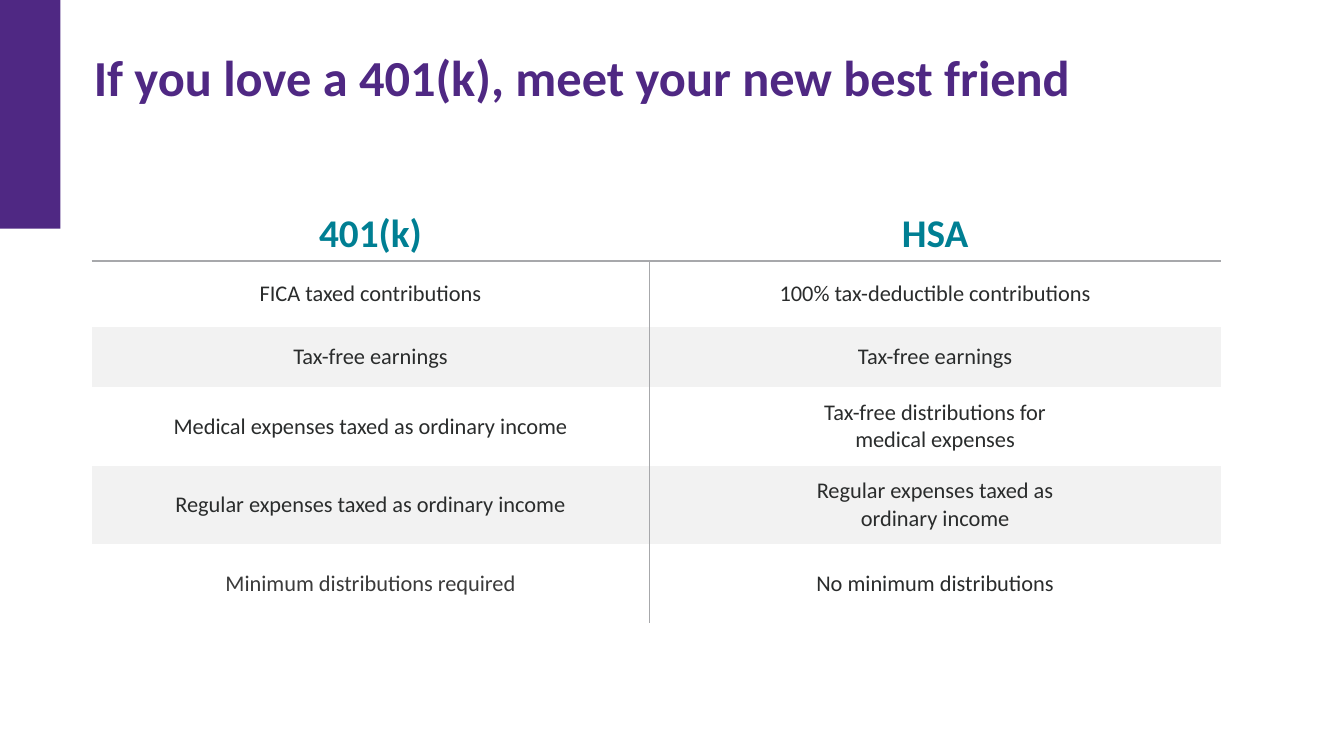
from lxml.etree import SubElement
from pptx import Presentation
from pptx.dml.color import RGBColor
from pptx.enum.shapes import MSO_SHAPE
from pptx.enum.text import MSO_ANCHOR, PP_ALIGN
from pptx.oxml.ns import qn
from pptx.util import Inches, Pt

TITLE = "If you love a 401(k), meet your new best friend"
ACCOUNTS = ("401(k)", "HSA")
COMPARISON = [
    ("FICA taxed contributions", "100% tax-deductible contributions"),
    ("Tax-free earnings", "Tax-free earnings"),
    ("Medical expenses taxed as ordinary income",
     "Tax-free distributions for\vmedical expenses"),
    ("Regular expenses taxed as ordinary income",
     "Regular expenses taxed as\vordinary income"),
    ("Minimum distributions required", "No minimum distributions"),
]
COLORS = {"purple": "4F2883", "teal": "007F93", "body": "2A2C2C",
          "soft": "3B3B3B", "rule": "A7A8AB", "white": "FFFFFF", "band": "F2F2F2"}
FONT = "Calibri"
COLUMN_WIDTHS = (5.53, 5.67)
ROW_HEIGHTS = (0.54, 0.65, 0.6, 0.78, 0.78, 0.78)


def color(name):
    return RGBColor.from_string(COLORS[name])


def style_text(paragraph, size, color_name, bold=False):
    font = paragraph.font
    font.name, font.size, font.bold = FONT, Pt(size), bold
    font.color.rgb = color(color_name)


def set_borders(cell, ruled_sides):
    """Rule the given sides (of L, R, T, B) and clear the others."""
    properties = cell._tc.get_or_add_tcPr()
    for side in "LRTB":
        line = SubElement(properties, qn(f"a:ln{side}"), w=str(Pt(1)))
        if side in ruled_sides:
            fill = SubElement(line, qn("a:solidFill"))
            SubElement(fill, qn("a:srgbClr"), val=COLORS["rule"])
        else:
            SubElement(line, qn("a:noFill"))


presentation = Presentation()
presentation.slide_width, presentation.slide_height = Inches(13.33), Inches(7.5)
slide = presentation.slides.add_slide(presentation.slide_layouts[6])

# Corner bar
bar = slide.shapes.add_shape(MSO_SHAPE.RECTANGLE, 0, 0, Inches(0.6), Inches(2.27))
bar.shadow.inherit = False
bar.fill.solid()
bar.fill.fore_color.rgb = color("purple")
bar.line.fill.background()

# Title
title = slide.shapes.add_textbox(Inches(0.93), Inches(0.4), Inches(12.32), Inches(0.63))
heading = title.text_frame
heading.word_wrap = True
heading.margin_left = heading.margin_right = heading.margin_top = heading.margin_bottom = 0
heading.text = TITLE
heading.paragraphs[0].line_spacing = 1.1
style_text(heading.paragraphs[0], 36, "purple", bold=True)

# Comparison table
rows = [ACCOUNTS, *COMPARISON]
table = slide.shapes.add_table(
    len(rows), len(ACCOUNTS), Inches(0.91), Inches(2.05),
    Inches(sum(COLUMN_WIDTHS)), Inches(sum(ROW_HEIGHTS))).table
table.horz_banding = False
for column, width in zip(table.columns, COLUMN_WIDTHS):
    column.width = Inches(width)

for r, (row, height) in enumerate(zip(rows, ROW_HEIGHTS)):
    table.rows[r].height = Inches(height)
    is_header = r == 0
    for c, text in enumerate(row):
        cell = table.cell(r, c)
        cell.text = text
        cell.vertical_anchor = MSO_ANCHOR.MIDDLE
        margin = Inches(0 if is_header else 0.05)
        cell.margin_left = cell.margin_right = margin
        cell.margin_top = cell.margin_bottom = margin

        paragraph = cell.text_frame.paragraphs[0]
        paragraph.alignment = PP_ALIGN.CENTER
        if is_header:
            style_text(paragraph, 28, "teal", bold=True)
            set_borders(cell, "B")
        else:
            is_softer = r == len(rows) - 1 and c == 0
            style_text(paragraph, 16, "soft" if is_softer else "body")
            set_borders(cell, "RL"[c] + ("T" if r == 1 else ""))

        if is_header:
            cell.fill.background()
        else:
            cell.fill.solid()
            cell.fill.fore_color.rgb = color("white" if r % 2 else "band")

presentation.save("out.pptx")
